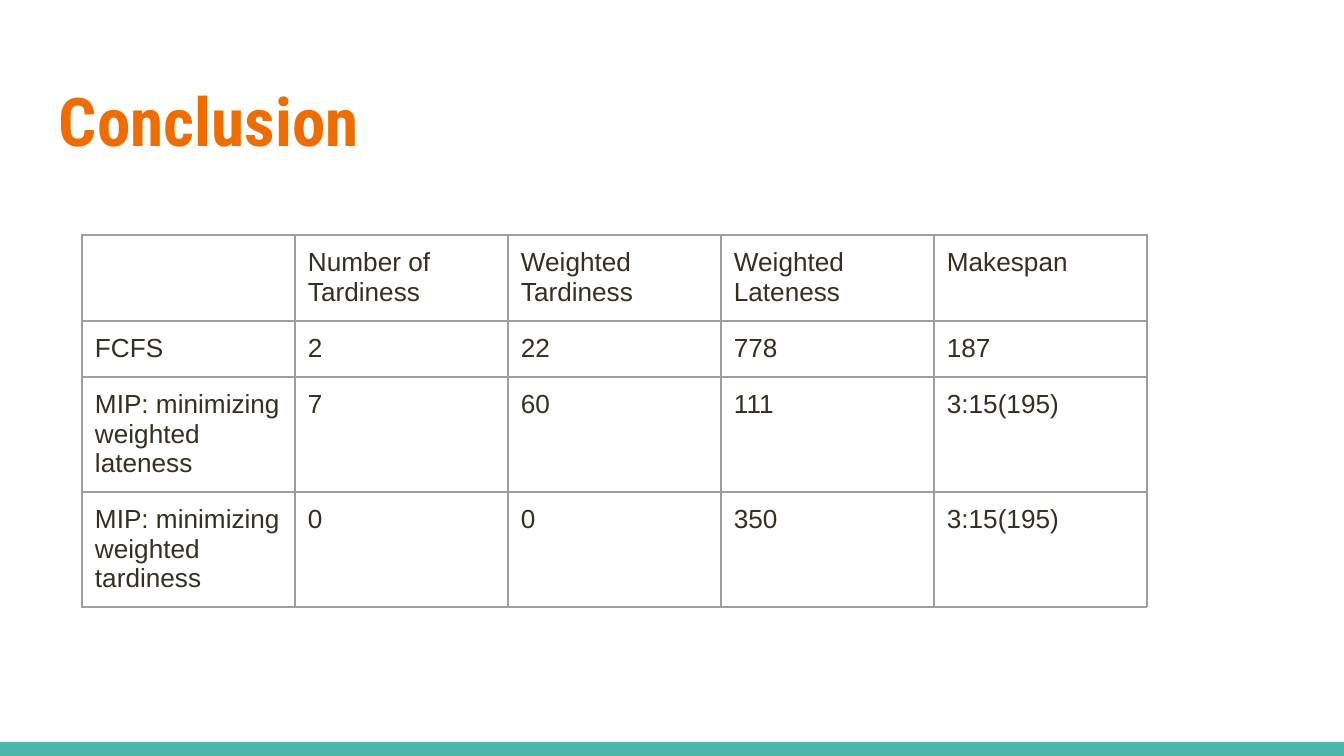
from lxml.etree import SubElement
from pptx import Presentation
from pptx.dml.color import RGBColor
from pptx.enum.shapes import MSO_SHAPE as Preset
from pptx.enum.text import MSO_ANCHOR as Anchor, PP_ALIGN as Align
from pptx.oxml.ns import qn
from pptx.util import Pt

EMU_PER_PX = 914400 / 134.4


def px(length):
    return round(length * EMU_PER_PX)


def color(value):
    return RGBColor.from_string(value)


class SlideBuilder:
    accent = "EF6C00"
    footer = "4DB6AC"
    ink = "342E23"
    grid = "9E9E9E"
    title_font = "Roboto Condensed"
    body_font = "Arial"
    inset = px(13)

    def __init__(self, slide):
        self.slide = slide

    def format_text(self, paragraph, font, size, text_color, bold=False):
        paragraph.alignment = Align.LEFT
        for run in paragraph.runs:
            run.font.name = font
            run.font.size = Pt(size)
            run.font.bold = bold
            run.font.color.rgb = color(text_color)

    def set_margins(self, target):
        target.margin_left = target.margin_right = self.inset
        target.margin_top = target.margin_bottom = self.inset

    def bar(self, left, top, width, height):
        shape = self.slide.shapes.add_shape(
            Preset.RECTANGLE, px(left), px(top), px(width), px(height))
        shape.shadow.inherit = False
        shape.fill.solid()
        shape.fill.fore_color.rgb = color(self.footer)
        shape.line.fill.background()

    def title(self, text, left, top, width, height):
        shape = self.slide.shapes.title
        shape.left, shape.top = px(left), px(top)
        shape.width, shape.height = px(width), px(height)
        text_frame = shape.text_frame
        text_frame.text = text
        text_frame.word_wrap = True
        text_frame.vertical_anchor = Anchor.TOP
        self.set_margins(text_frame)
        self.format_text(text_frame.paragraphs[0], self.title_font, 36, self.accent, True)

    def cell_borders(self, cell):
        properties = cell._tc.get_or_add_tcPr()
        for position, side in enumerate(("lnL", "lnR", "lnT", "lnB")):
            line = properties.makeelement(qn(f"a:{side}"), {"w": str(Pt(0.75))})
            fill = SubElement(line, qn("a:solidFill"))
            SubElement(fill, qn("a:srgbClr"), val=self.grid)
            properties.insert(position, line)

    def table(self, rows, left, top, column_width, row_heights):
        column_count = len(rows[0])
        table = self.slide.shapes.add_table(
            len(rows), column_count, px(left), px(top),
            px(column_width * column_count), px(sum(row_heights))).table
        table.first_row = table.horz_banding = False
        for column in table.columns:
            column.width = px(column_width)
        for row, height, texts in zip(table.rows, row_heights, rows):
            row.height = px(height)
            for cell, text in zip(row.cells, texts):
                cell.text = text
                cell.fill.background()
                cell.vertical_anchor = Anchor.TOP
                self.set_margins(cell)
                self.format_text(cell.text_frame.paragraphs[0], self.body_font, 14, self.ink)
                self.cell_borders(cell)


def main():
    presentation = Presentation()
    presentation.slide_width = px(1344)
    presentation.slide_height = px(756)
    title_only = presentation.slide_layouts[5]
    builder = SlideBuilder(presentation.slides.add_slide(title_only))

    builder.bar(0, 742, 1344, 14)
    builder.title("Conclusion", 46, 66, 1252, 103)
    results = [
        ("", "Number of Tardiness", "Weighted Tardiness", "Weighted Lateness", "Makespan"),
        ("FCFS", "2", "22", "778", "187"),
        ("MIP: minimizing weighted lateness", "7", "60", "111", "3:15(195)"),
        ("MIP: minimizing weighted tardiness", "0", "0", "350", "3:15(195)"),
    ]
    builder.table(results, 82, 235, 213, (86, 56, 115, 115))

    presentation.save("out.pptx")


if __name__ == "__main__":
    main()
